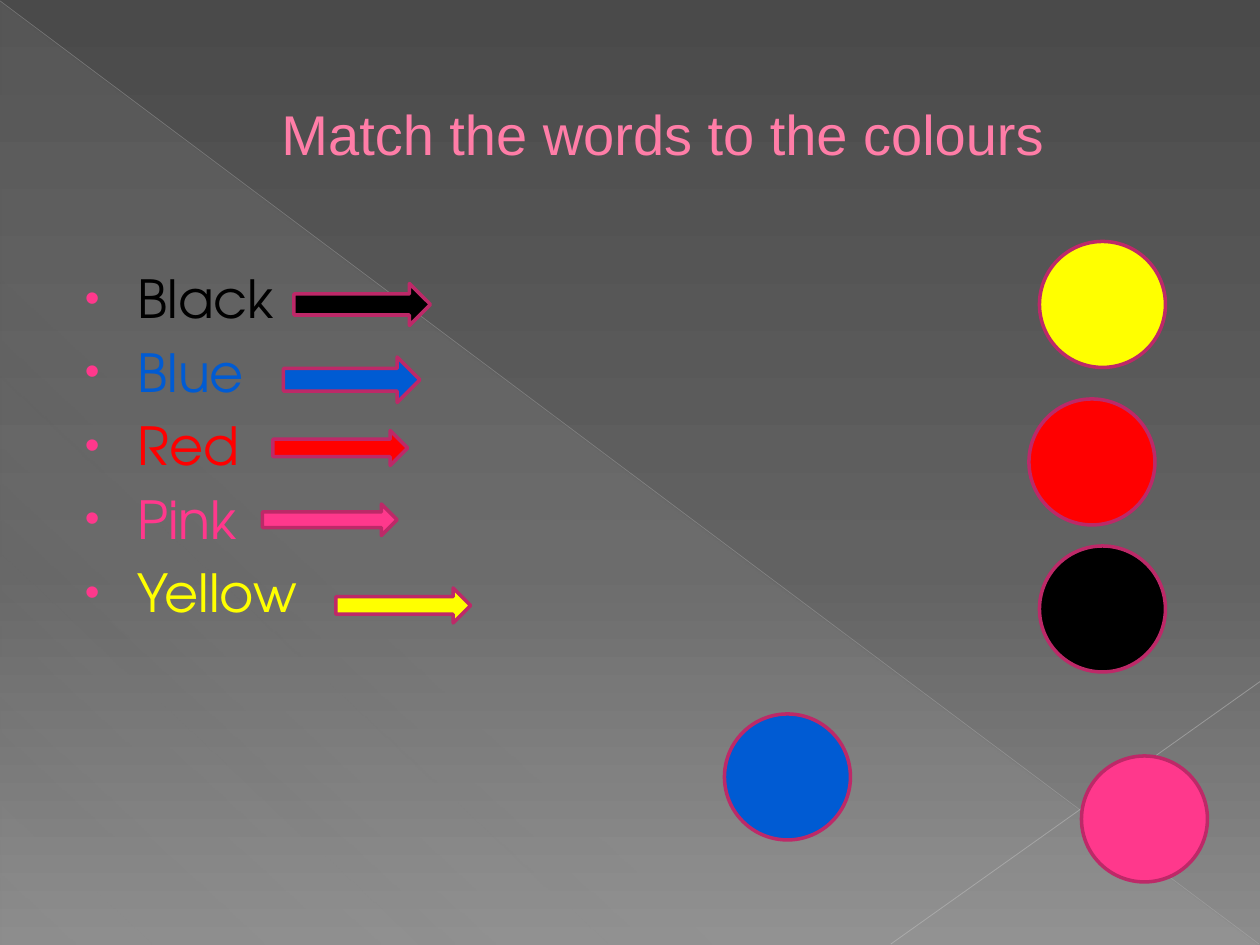
from typing import NamedTuple

from lxml import etree
from pptx import Presentation
from pptx.dml.color import RGBColor
from pptx.enum import shapes, text
from pptx.oxml.ns import qn
from pptx.util import Pt

EDGE = "BD2968"
PINK = "FF388C"


class Stop(NamedTuple):
    pos: int
    color: str
    opacity: int = 100


class Match(NamedTuple):
    """A colour word with its arrow box and the corner of its circle."""
    word: str
    color: str
    arrow: tuple[float, float, float, float]
    circle: tuple[float, float]


MATCHES = [
    Match("Black", "000000", (168, 162, 78, 24), (594, 312)),
    Match("Blue", "005BD3", (162, 204, 78, 26), (414, 408)),
    Match("Red", "FF0000", (156, 246, 77, 20), (588, 228)),
    Match("Pink", PINK, (150, 288, 77, 18), (618, 432)),
    Match("Yellow", "FFFF00", (192, 336, 77, 20), (594, 138)),
]


def rgb(color: str) -> RGBColor:
    return RGBColor.from_string(color)


def sub(parent, tag: str, **attrs):
    return etree.SubElement(parent, qn(tag), {k: str(v) for k, v in attrs.items()})


def set_gradient(fill, root, stops: list[Stop], angle: int) -> None:
    """Fill with any number of stops, angle in degrees clockwise."""
    fill.gradient()
    grad = root.find(".//" + qn("a:gradFill"))
    for child in list(grad):
        grad.remove(child)
    gs_list = sub(grad, "a:gsLst")
    for stop in stops:
        gs = sub(gs_list, "a:gs", pos=stop.pos * 1000)
        clr = sub(gs, "a:srgbClr", val=stop.color)
        if stop.opacity < 100:
            sub(clr, "a:alpha", val=stop.opacity * 1000)
    sub(grad, "a:lin", ang=angle * 60000, scaled=0)


def add_line(s, start, end, color: str, width: float, opacity: int) -> None:
    c = s.shapes.add_connector(shapes.MSO_CONNECTOR.STRAIGHT, *map(Pt, start + end))
    c.line.width = Pt(width)
    c.line.color.rgb = rgb(color)
    sub(c._element.spPr.find(".//" + qn("a:srgbClr")), "a:alpha", val=opacity * 1000)
    sub(c._element.spPr, "a:effectLst")


def add_shape(s, kind, box, color: str) -> None:
    sp = s.shapes.add_shape(kind, *map(Pt, box))
    sp.shadow.inherit = False
    sp.fill.solid()
    sp.fill.fore_color.rgb = rgb(color)
    sp.line.color.rgb = rgb(EDGE)
    sp.line.width = Pt(2)


def add_text_frame(s, box, anchor):
    tf = s.shapes.add_textbox(*map(Pt, box)).text_frame
    tf.word_wrap = True
    tf.vertical_anchor = anchor
    return tf


def write(p, words: str, color: str, **font) -> None:
    r = p.add_run()
    r.text = words
    r.font.color.rgb = rgb(color)
    for name, value in font.items():
        setattr(r.font, name, value)


def set_bullet(p, margin: float, indent: float) -> None:
    pPr = p._p.get_or_add_pPr()
    for name, value in {"marL": Pt(margin), "indent": Pt(indent)}.items():
        pPr.set(name, str(value))
    sub(sub(pPr, "a:buClr"), "a:srgbClr", val=PINK)
    sub(pPr, "a:buSzPct", val=80000)
    sub(pPr, "a:buFont", typeface="Arial")
    sub(pPr, "a:buChar", char="•")


def add_backdrop(s) -> None:
    set_gradient(s.background.fill, s._element,
                 [Stop(0, "4A4A4A"), Stop(60, "626262"), Stop(100, "8C8C8C")], 90)
    sp = s.shapes.add_shape(shapes.MSO_SHAPE.RIGHT_TRIANGLE,
                            *map(Pt, (0.5, 1, 719, 539)))
    sp.shadow.inherit = False
    sp.line.fill.background()
    set_gradient(sp.fill, sp._element.spPr,
                 [Stop(0, "D2D2D2", 10), Stop(70, "D2D2D2", 8), Stop(100, "D2D2D2", 1)], 133)
    add_line(s, (0, 0.5), (719.5, 539.5), "BFBFBF", 0.39, 35)
    add_line(s, (720, 389.5), (509, 539.5), "C6C6C6", 0.47, 45)


def main() -> None:
    prs = Presentation()
    prs.slide_width, prs.slide_height = Pt(720), Pt(540)
    s = prs.slides.add_slide(prs.slide_layouts[6])
    add_backdrop(s)

    p = add_text_frame(s, (36, 21, 648, 110), text.MSO_ANCHOR.MIDDLE).paragraphs[0]
    p.alignment = text.PP_ALIGN.CENTER
    p._p.get_or_add_pPr().set("marL", str(Pt(38)))
    write(p, "Match the words to the colours", "FF7DA7", size=Pt(32), name="Arial")

    tf = add_text_frame(s, (36, 148.5, 648, 360), text.MSO_ANCHOR.TOP)
    for i, match in enumerate(MATCHES):
        p = tf.add_paragraph() if i else tf.paragraphs[0]
        p.space_before = Pt(6)
        set_bullet(p, 35.5, -30)
        write(p, match.word, match.color, size=Pt(30), name="TeX Gyre Adventor")

    for match in MATCHES:
        add_shape(s, shapes.MSO_SHAPE.OVAL, (*match.circle, 72, 72), match.color)
        add_shape(s, shapes.MSO_SHAPE.RIGHT_ARROW, match.arrow, match.color)

    prs.save("out.pptx")


if __name__ == "__main__":
    main()
